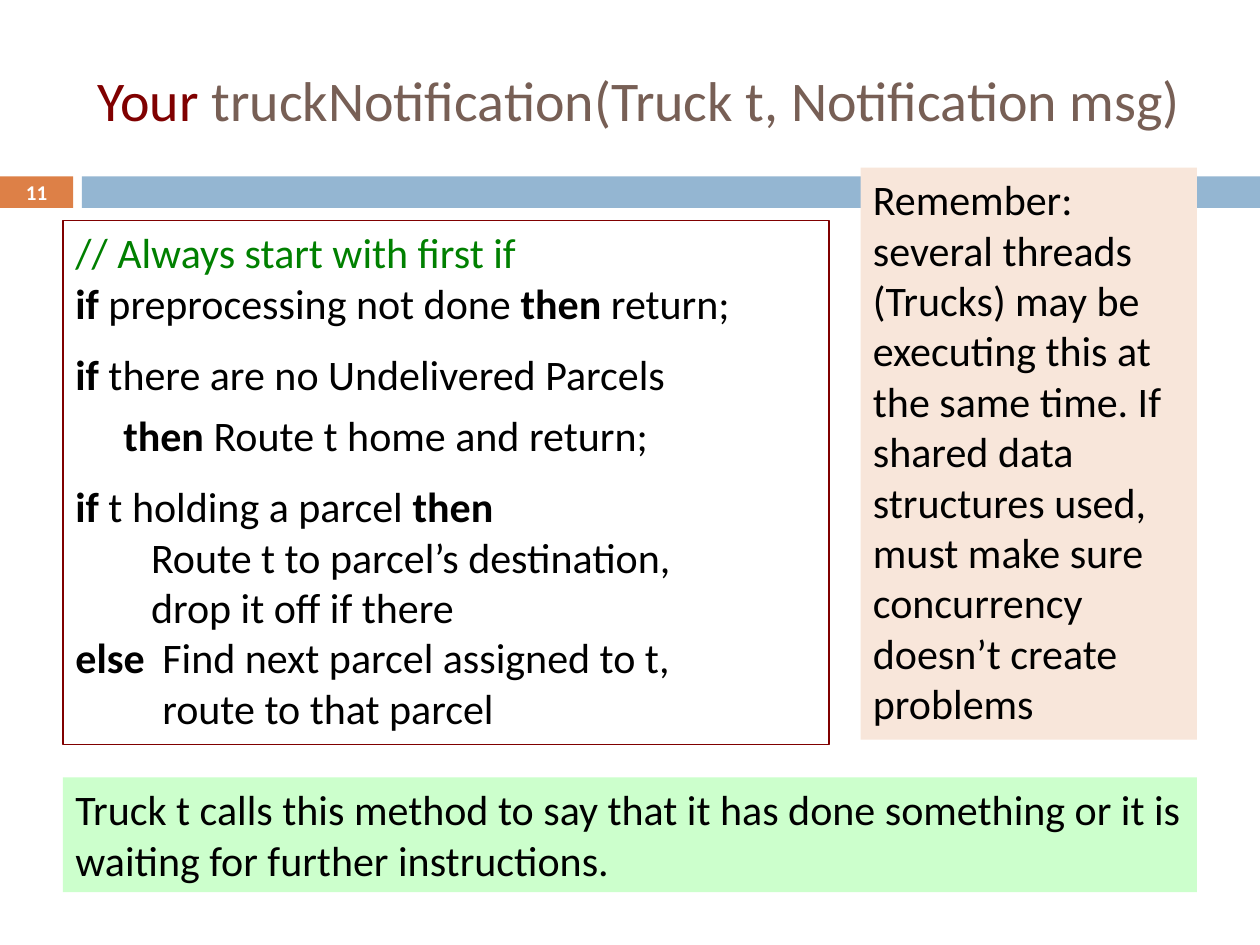
from pptx import Presentation, util as u
from pptx.dml.color import RGBColor
from pptx.enum import shapes, text

W, H = 10, 7.5
LEFT, RIGHT = 0.05 * W, 0.95 * W
BAR_TOP, BAR_HEIGHT, NUMBER_WIDTH = 1.4, 0.25, 0.58
FONT = "Calibri"
BLACK, MAROON, GREEN, WHITE = "000000", "800000", "008000", "FFFFFF"

# (left indent, first line indent, space before, runs of (text, bold, colour))
CODE = [
    (0, 0, 0, [("// Always start with first if", False, GREEN)]),
    (0, 0, 0, [("if ", True, BLACK), ("preprocessing not done ", False, BLACK),
               ("then ", True, BLACK), ("return;", False, BLACK)]),
    (0, 0, 12, [("if ", True, BLACK), ("there are no Undelivered Parcels", False, BLACK)]),
    (0.38, 0, 6, [("then ", True, BLACK), ("Route t home and return;", False, BLACK)]),
    (0, 0, 12, [("if ", True, BLACK), ("t holding a parcel ", False, BLACK),
                ("then", True, BLACK)]),
    (0.6, 0, 0, [("Route t to parcel’s destination,", False, BLACK)]),
    (0.6, 0, 0, [("drop it off if there", False, BLACK)]),
    (0.69, -0.69, 0, [("else\t", True, BLACK), ("Find next parcel assigned to t,", False, BLACK)]),
    (0.69, 0, 0, [("route to that parcel", False, BLACK)]),
]
REMINDER = ("Remember: several threads (Trucks) may be executing this at the same time. "
            "If shared data structures used, must make sure concurrency doesn’t create problems")
SUMMARY = ("Truck t calls this method to say that it has done something "
           "or it is waiting for further instructions.")


def rgb(value):
    """Turn a hex string into a colour."""
    return RGBColor.from_string(value)


def add_run(p, words, size=24, bold=False, color=BLACK):
    """Append one formatted run to a paragraph."""
    r = p.add_run()
    r.text = words
    r.font.name, r.font.size, r.font.bold = FONT, u.Pt(size), bold
    r.font.color.rgb = rgb(color)


def add_box(s, left, top, width, height, fill=None, line=None):
    """Add a rectangle with left-aligned wrapped text and return it."""
    sp = s.shapes.add_shape(shapes.MSO_SHAPE.RECTANGLE,
                            *map(u.Inches, (left, top, width, height)))
    sp.shadow.inherit = False
    if fill:
        sp.fill.solid()
        sp.fill.fore_color.rgb = rgb(fill)
    else:
        sp.fill.background()
    if line:
        sp.line.color.rgb = rgb(line)
        sp.line.width = u.Pt(0.75)
    else:
        sp.line.fill.background()
    tf = sp.text_frame
    tf.word_wrap = True
    tf.vertical_anchor = text.MSO_ANCHOR.TOP
    tf.paragraphs[0].alignment = text.PP_ALIGN.LEFT
    return sp


def add_note(s, words, *box, fill):
    """Add a filled box holding one paragraph."""
    sp = add_box(s, *box, fill=fill)
    add_run(sp.text_frame.paragraphs[0], words)


def add_title(s):
    """Place and fill the title placeholder."""
    sp = s.shapes.title
    sp.left, sp.top, sp.width, sp.height = map(u.Inches, (0.67, 0.25, 8.92, 1.08))
    tf = sp.text_frame
    tf.vertical_anchor = text.MSO_ANCHOR.MIDDLE
    p = tf.paragraphs[0]
    p.alignment = text.PP_ALIGN.LEFT
    add_run(p, "Your ", 32, color=MAROON)
    add_run(p, "truckNotification(Truck t, Notification msg)", 32, color="775F55")


def add_bar(s):
    """Add the two-part band with the slide number."""
    sp = add_box(s, 0, BAR_TOP, NUMBER_WIDTH, BAR_HEIGHT, fill="DD8047")
    tf = sp.text_frame
    tf.margin_top = tf.margin_bottom = 0
    tf.vertical_anchor = text.MSO_ANCHOR.MIDDLE
    p = tf.paragraphs[0]
    p.alignment = text.PP_ALIGN.CENTER
    add_run(p, "11", 12, True, WHITE)
    add_box(s, 0.65, BAR_TOP, W - 0.65, BAR_HEIGHT, fill="94B6D2")


def add_code(s):
    """Add the outlined box of pseudocode."""
    tf = add_box(s, LEFT, 1.75, 6.08, 4.16, line=MAROON).text_frame
    for i, (indent, first, before, runs) in enumerate(CODE):
        p = tf.add_paragraph() if i else tf.paragraphs[0]
        p.alignment = text.PP_ALIGN.LEFT
        p.space_before = u.Pt(before)
        pPr = p._p.get_or_add_pPr()
        pPr.set("marL", str(u.Inches(indent)))
        pPr.set("indent", str(u.Inches(first)))
        for words, bold, color in runs:
            add_run(p, words, bold=bold, color=color)


def main():
    """Build the slide and save it."""
    prs = Presentation()
    prs.slide_width, prs.slide_height = u.Inches(W), u.Inches(H)
    s = prs.slides.add_slide(prs.slide_layouts[5])
    add_bar(s)
    add_title(s)
    add_code(s)
    add_note(s, REMINDER, RIGHT - 2.67, 1.33, 2.67, 4.54, fill="F8E6DA")
    add_note(s, SUMMARY, LEFT, 6.17, RIGHT - LEFT, 0.91, fill="CCFFCC")
    prs.save("out.pptx")


if __name__ == "__main__":
    main()
